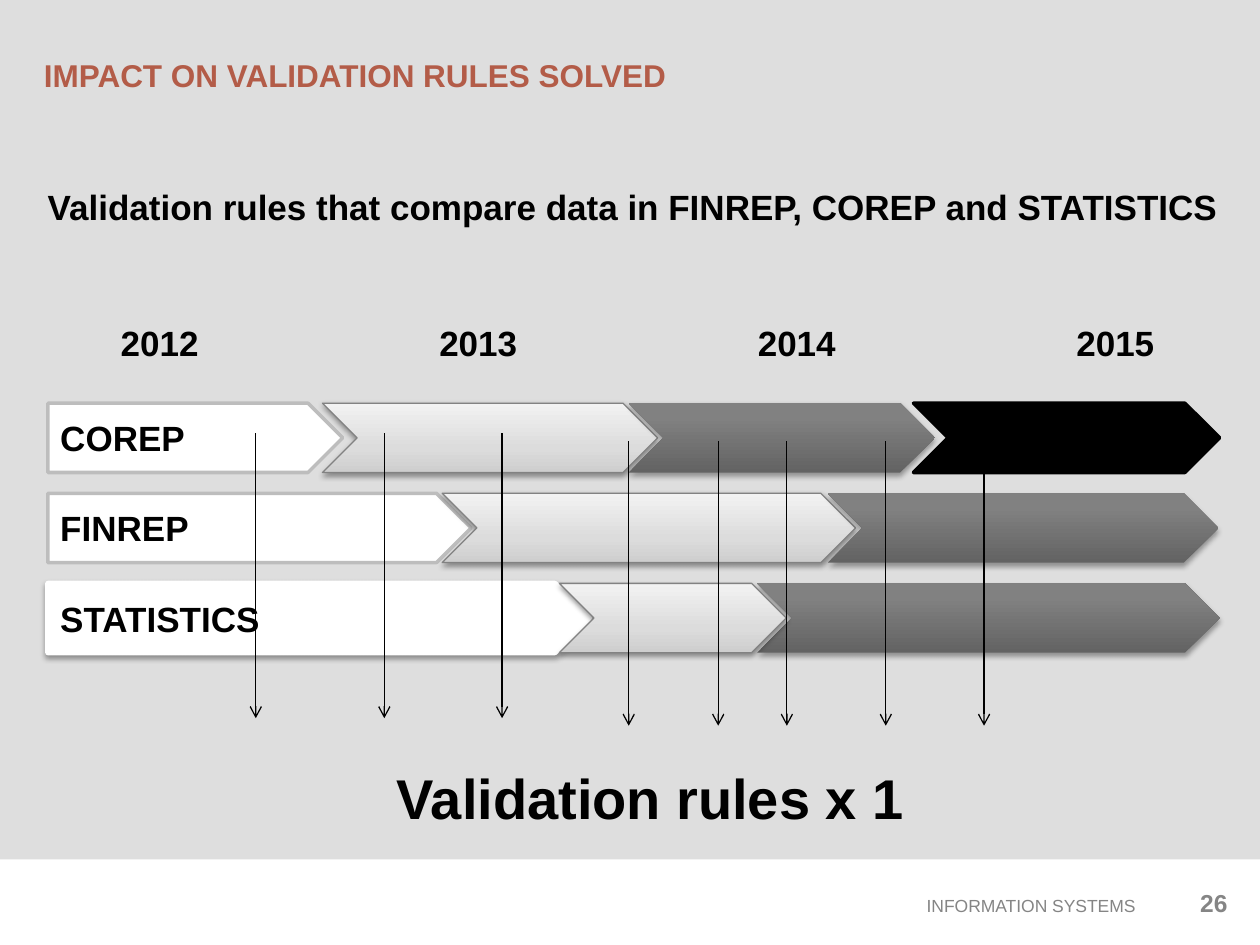
import typing

import lxml.etree
import pptx
import pptx.dml.color
import pptx.enum.dml
import pptx.enum.shapes
import pptx.enum.text
import pptx.oxml.ns
import pptx.util

COLS, ROWS = 100, 75
WIDE, HIGH = pptx.util.Inches(10), pptx.util.Inches(7.5)
KIND = pptx.enum.shapes.MSO_SHAPE
ALIGN = pptx.enum.text.PP_ALIGN
MID = pptx.enum.text.MSO_ANCHOR.MIDDLE
TOP = pptx.enum.text.MSO_ANCHOR.TOP


class Look(typing.NamedTuple):
    """Fill as (percent, colour) stops; shade as (opacity, distance in points)."""
    stops: tuple
    line: str = ""
    weight: float = 0
    shade: tuple = ()


class Step(typing.NamedTuple):
    left: float
    width: float
    look: Look
    text: str = ""


class Label(typing.NamedTuple):
    text: str
    left: float
    top: float
    width: float
    height: float
    size: float = 20
    color: str = "000000"
    bold: bool = True
    align: typing.Any = ALIGN.LEFT
    anchor: typing.Any = TOP
    wrap: bool = False


BAND = Look(((0, "DEDEDE"),))
EDGED = Look(((0, "FFFFFF"),), "BDBDBD", 2)
PLAIN = Look(((0, "FFFFFF"),), "FFFFFF", 3, (38, 1.6))
LIGHT = Look(((0, "CECECE"), (35, "DCDCDC"), (100, "F2F2F2")),
             "828282", 0.75, (38, 1.6))
DARK = Look(((0, "636363"), (80, "818181"), (100, "818181")), shade=(35, 1.8))
BLACK = Look(((0, "000000"),), "000000", 2)

LANES = (
    (Step(3.8, 23.4, EDGED, "COREP"), Step(25.6, 26.6, LIGHT),
     Step(49.9, 24.3, DARK), Step(72.5, 24.3, BLACK)),
    (Step(3.8, 33.6, EDGED, "FINREP"), Step(35.1, 32.8, LIGHT),
     Step(65.7, 31, DARK)),
    (Step(3.8, 43, PLAIN, "STATISTICS"), Step(60.1, 36.7, DARK),
     Step(44.4, 18, LIGHT)),
)
LANE_TOP, LANE_GAP, LANE_HIGH = 32, 7.15, 5.5

# Each group of checks: start row, columns
CHECKS = ((34.4, (20.3, 30.5, 39.85)),
          (35, (49.9, 57, 62.45, 70.3, 78.1)))
CHECK_LONG = 22.6

LABELS = (
    Label("INFORMATION SYSTEMS", 30.8, 70.5, 60.3, 2.7, 10, "858585", False,
          ALIGN.RIGHT, MID, True),
    Label("IMPACT ON VALIDATION RULES SOLVED", 2.5, 1.2, 64.8, 9.5, 18,
          "B35C48", anchor=MID, wrap=True),
    Label("26", 92.7, 70, 5.7, 3.5, 14, "858585", align=ALIGN.RIGHT, wrap=True),
    Label("Validation rules that compare data in FINREP, COREP and STATISTICS",
          2.8, 14.2, 97.2, 4.4),
    Label("Validation rules x 1", 30.5, 60.1, 42.6, 6.4, 32),
)
YEARS = tuple(Label(str(2012 + n), 8.6 + 25.28 * n, 25, 8.3, 4.4)
              for n in range(4))


def across(cols: float) -> int:
    return round(WIDE * cols / COLS)


def down(rows: float) -> int:
    return round(HIGH * rows / ROWS)


def paint(target, code: str) -> None:
    """Give a colour to a font, line or solid fill."""
    target.rgb = pptx.dml.color.RGBColor.from_string(code)


def add_node(parent, tag: str, **attrs):
    node = lxml.etree.SubElement(parent, pptx.oxml.ns.qn(tag))
    for name, value in attrs.items():
        node.set(name, str(value))
    return node


def write(frame, text: str, size: float, color: str, bold: bool, align) -> None:
    para = frame.paragraphs[0]
    para.alignment = align
    run = para.add_run()
    run.text = text
    run.font.name = "Arial"
    run.font.size = pptx.util.Pt(size)
    run.font.bold = bold
    paint(run.font.color, color)


def add_label(slide, label: Label) -> None:
    box = slide.shapes.add_textbox(across(label.left), down(label.top),
                                   across(label.width), down(label.height))
    frame = box.text_frame
    frame.word_wrap = label.wrap
    frame.vertical_anchor = label.anchor
    write(frame, label.text, label.size, label.color, label.bold, label.align)


def fill_shape(shape, stops: tuple) -> None:
    """Fill with one colour, or with a gradient that runs upwards."""
    if len(stops) == 1:
        shape.fill.solid()
        paint(shape.fill.fore_color, stops[0][1])
        return
    shape.fill.gradient()
    shape.fill.gradient_angle = 90
    ramp = shape._element.spPr.find(".//" + pptx.oxml.ns.qn("a:gsLst"))
    for old in list(ramp):
        ramp.remove(old)
    for share, code in stops:
        stop = add_node(ramp, "a:gs", pos=share * 1000)
        add_node(stop, "a:srgbClr", val=code)


def add_shade(shape, alpha: int, dist: float) -> None:
    effects = shape._element.spPr.find(pptx.oxml.ns.qn("a:effectLst"))
    shade = add_node(effects, "a:outerShdw", blurRad=pptx.util.Pt(3.1),
                     dist=pptx.util.Pt(dist), dir=90 * 60000, rotWithShape=0)
    tint = add_node(shade, "a:srgbClr", val="000000")
    add_node(tint, "a:alpha", val=alpha * 1000)


def add_block(slide, kind, look: Look, left: float, top: float,
              width: float, height: float):
    shape = slide.shapes.add_shape(kind, across(left), down(top),
                                   across(width), down(height))
    shape.shadow.inherit = False
    fill_shape(shape, look.stops)
    if look.line:
        paint(shape.line.color, look.line)
        shape.line.width = pptx.util.Pt(look.weight)
    else:
        shape.line.fill.background()
    if look.shade:
        add_shade(shape, *look.shade)
    return shape


def add_step(slide, step: Step, top: float) -> None:
    kind = KIND.PENTAGON if step.text else KIND.CHEVRON
    shape = add_block(slide, kind, step.look, step.left, top,
                      step.width, LANE_HIGH)
    if step.text:
        shape.text_frame.vertical_anchor = MID
        write(shape.text_frame, step.text, 20, "000000", True, ALIGN.LEFT)


def add_check(slide, col: float, row: float) -> None:
    line = slide.shapes.add_connector(
        pptx.enum.shapes.MSO_CONNECTOR.STRAIGHT, across(col), down(row),
        across(col), down(row + CHECK_LONG))
    paint(line.line.color, "000000")
    line.line.width = pptx.util.Pt(0.75)
    props = line._element.spPr
    add_node(props.find(pptx.oxml.ns.qn("a:ln")), "a:tailEnd", type="arrow")
    add_node(props, "a:effectLst")


def main() -> None:
    deck = pptx.Presentation()
    deck.slide_width, deck.slide_height = WIDE, HIGH
    slide = deck.slides.add_slide(deck.slide_layouts[6])
    add_block(slide, KIND.RECTANGLE, BAND, 0, 0, COLS, 68.2)
    for label in LABELS + YEARS:
        add_label(slide, label)
    for n, lane in enumerate(LANES):
        for step in lane:
            add_step(slide, step, LANE_TOP + n * LANE_GAP)
    for row, cols in CHECKS:
        for col in cols:
            add_check(slide, col, row)
    deck.save("out.pptx")


if __name__ == "__main__":
    main()
